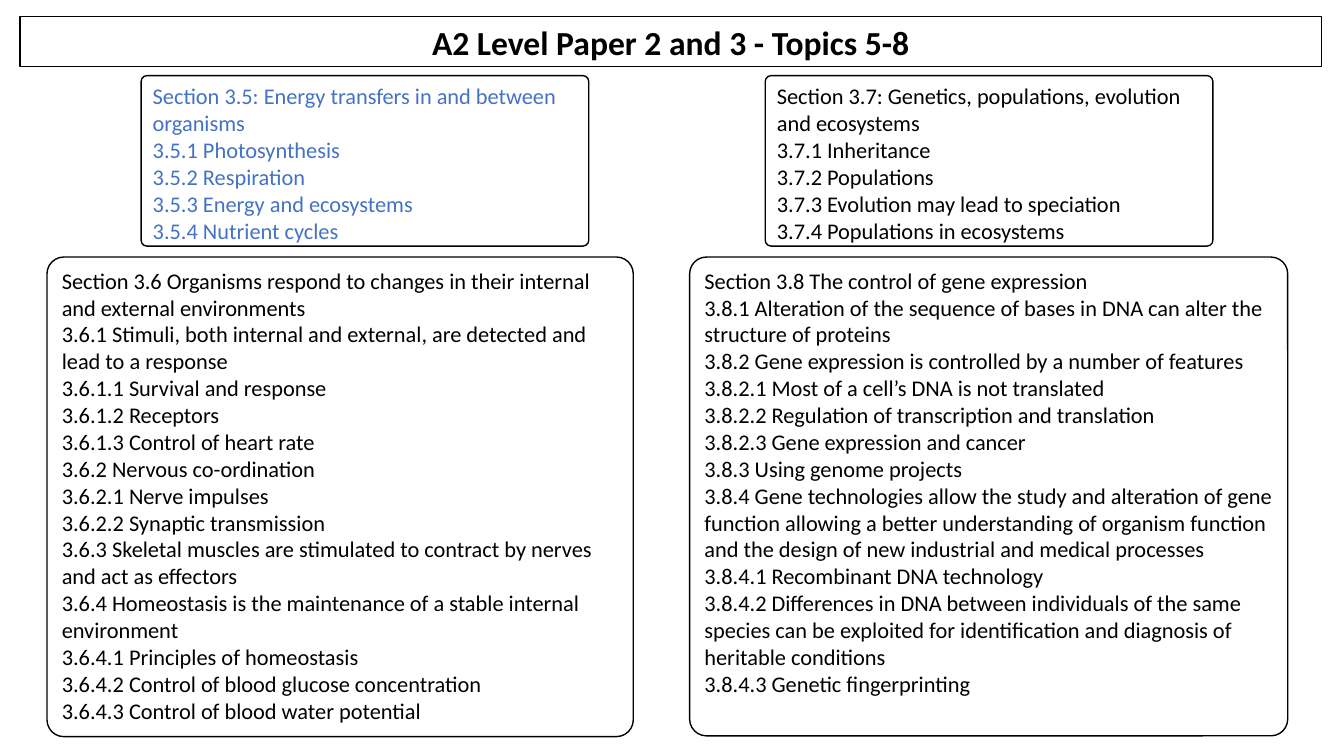
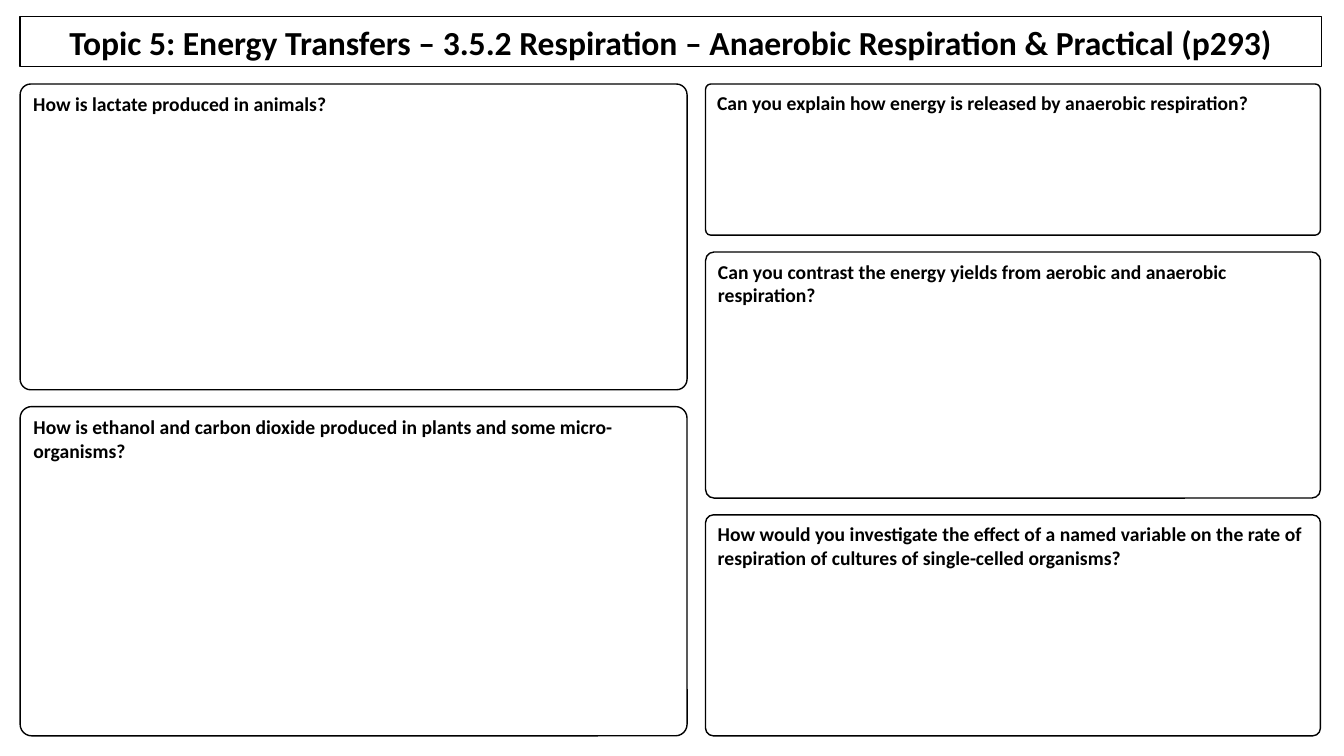
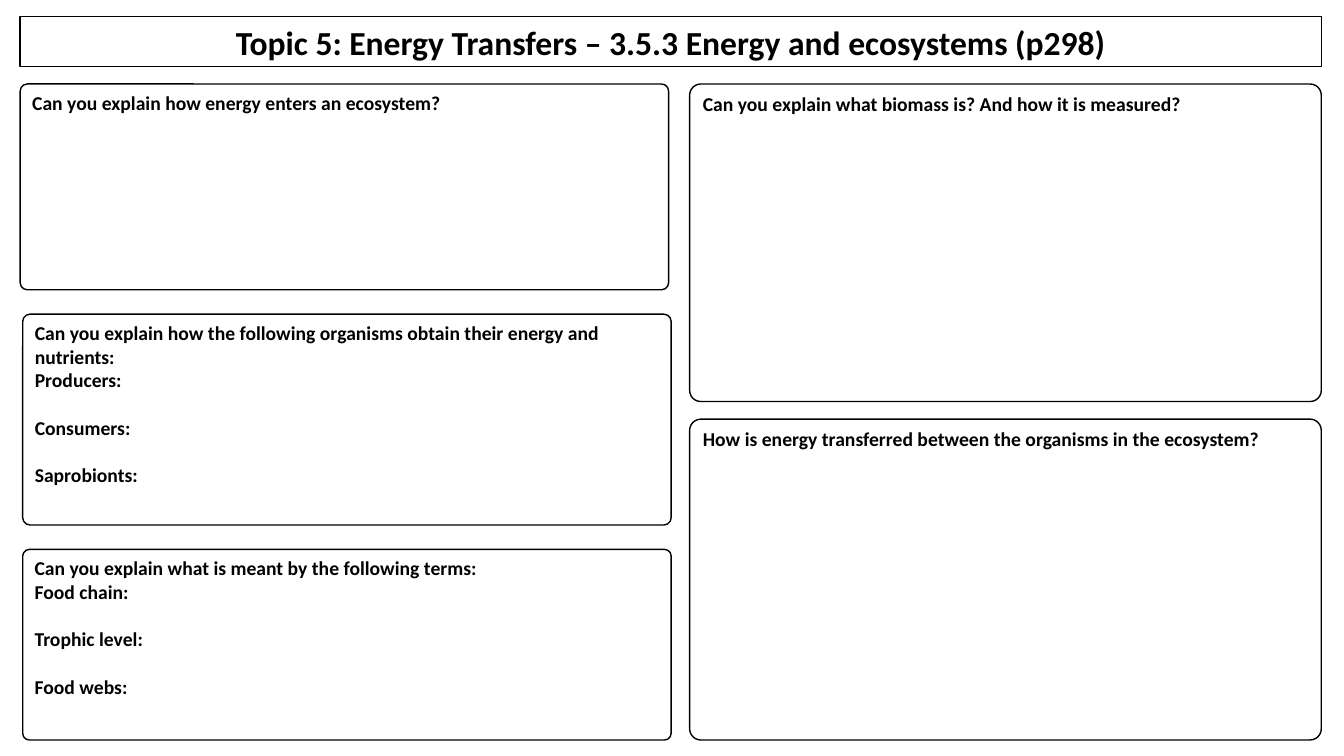
from lxml import etree
from pptx import Presentation
from pptx import util as u
from pptx.dml.color import RGBColor
from pptx.enum import shapes, text
from pptx.oxml.ns import qn

BLACK = RGBColor(0x00, 0x00, 0x00)
BLUE = RGBColor(0x44, 0x72, 0xC4)
FONT = "Calibri"
CORNER = 0.035
CELL = u.Inches(1 / 12)  # the slide is a grid of 160 columns by 90 rows
GAP_AFTER_TERM = 17  # one line left free for an answer

# Each stack: left, top, width, gap, boxes from top to bottom as (height, paragraphs)
SYLLABUS = [
    (16.8, 9, 53.3, 0, [(20.3, [
        "Section 3.5: Energy transfers in and between organisms",
        "3.5.1 Photosynthesis",
        "3.5.2 Respiration",
        "3.5.3 Energy and ecosystems",
        "3.5.4 Nutrient cycles"])]),
    (91.1, 9, 53.3, 0, [(20.3, [
        "Section 3.7: Genetics, populations, evolution and ecosystems",
        "3.7.1 Inheritance",
        "3.7.2 Populations",
        "3.7.3 Evolution may lead to speciation",
        "3.7.4 Populations in ecosystems"])]),
    (5.6, 30.6, 69.8, 0, [(57.1, [
        "Section 3.6 Organisms respond to changes in their internal and external environments",
        "3.6.1 Stimuli, both internal and external, are detected and lead to a response",
        "3.6.1.1 Survival and response",
        "3.6.1.2 Receptors",
        "3.6.1.3 Control of heart rate",
        "3.6.2 Nervous co-ordination",
        "3.6.2.1 Nerve impulses",
        "3.6.2.2 Synaptic transmission",
        "3.6.3 Skeletal muscles are stimulated to contract by nerves and act as effectors",
        "3.6.4 Homeostasis is the maintenance of a stable internal environment",
        "3.6.4.1 Principles of homeostasis",
        "3.6.4.2 Control of blood glucose concentration",
        "3.6.4.3 Control of blood water potential"])]),
    (82.1, 30.6, 71.2, 0, [(57, [
        "Section 3.8 The control of gene expression",
        "3.8.1 Alteration of the sequence of bases in DNA can alter the structure of proteins",
        "3.8.2 Gene expression is controlled by a number of features",
        "3.8.2.1 Most of a cell’s DNA is not translated",
        "3.8.2.2 Regulation of transcription and translation",
        "3.8.2.3 Gene expression and cancer",
        "3.8.3 Using genome projects",
        "3.8.4 Gene technologies allow the study and alteration of gene function allowing "
        "a better understanding of organism function and the design of new industrial "
        "and medical processes",
        "3.8.4.1 Recombinant DNA technology",
        "3.8.4.2 Differences in DNA between individuals of the same species can be "
        "exploited for identification and diagnosis of heritable conditions",
        "3.8.4.3 Genetic fingerprinting"])]),
]
ANAEROBIC = [
    (2.4, 10, 79.4, 2, [
        (36.4, ["How is lactate produced in animals?"]),
        (39.2, ["How is ethanol and carbon dioxide produced in plants and some micro-organisms?"])]),
    (84, 10, 73.2, 2, [
        (18, ["Can you explain how energy is released by anaerobic respiration?"]),
        (29.3, ["Can you contrast the energy yields from aerobic and anaerobic respiration?"]),
        (26.3, ["How would you investigate the effect of a named variable on the rate of "
                "respiration of cultures of single-celled organisms?"])]),
]
ECOSYSTEMS = [
    (2.4, 10, 77.2, 0, [
        (24.5, ["Can you explain how energy enters an ecosystem?"])]),
    (2.7, 37.4, 77.2, 2.9, [
        (25.1, ["Can you explain how the following organisms obtain their energy and nutrients:",
                "Producers:", "Consumers:", "Saprobionts:"]),
        (22.7, ["Can you explain what is meant by the following terms:",
                "Food chain:", "Trophic level:", "Food webs:"])]),
    (82.1, 10, 75.2, 2.1, [
        (37.8, ["Can you explain what biomass is? And how it is measured?"]),
        (38.2, ["How is energy transferred between the organisms in the ecosystem?"])]),
]
SLIDES = [
    ("A2 Level Paper 2 and 3 - Topics 5-8", SYLLABUS, {"size": 16}),
    ("Topic 5: Energy Transfers – 3.5.2 Respiration – Anaerobic Respiration & Practical (p293)",
     ANAEROBIC, {"size": 14, "bold": True}),
    ("Topic 5: Energy Transfers – 3.5.3 Energy and ecosystems (p298)",
     ECOSYSTEMS, {"size": 14, "bold": True, "gap": GAP_AFTER_TERM}),
]


def write(box, paragraphs, size, bold=False, color=BLACK, gap=0,
          align=text.PP_ALIGN.LEFT, anchor=text.MSO_ANCHOR.TOP):
    """Outline the box and fill it with text; gap is the space from the third paragraph on."""
    box.fill.background()
    box.line.color.rgb = BLACK
    box.line.width = u.Pt(1)
    frame = box.text_frame
    frame.word_wrap = True
    frame.auto_size = text.MSO_AUTO_SIZE.NONE
    frame.vertical_anchor = anchor
    frame.text = "\n".join(paragraphs)
    for index, paragraph in enumerate(frame.paragraphs):
        paragraph.alignment = align
        paragraph.line_spacing = 1.0
        paragraph.space_before = u.Pt(gap if index > 1 else 0)
        font = paragraph.font
        font.name, font.size, font.bold = FONT, u.Pt(size), bold
        font.color.rgb = color


def on_grid(*cells):
    return [round(CELL * cell) for cell in cells]


deck = Presentation()
deck.slide_width, deck.slide_height = on_grid(160, 90)
title_only = deck.slide_layouts[5]

for heading, stacks, style in SLIDES:
    slide = deck.slides.add_slide(title_only)

    title = slide.shapes.title
    title.left, title.top, title.width, title.height = on_grid(2.4, 2, 154.9, 5.9)
    outline = etree.SubElement(title.element.spPr, qn("a:prstGeom"), prst="roundRect")
    corners = etree.SubElement(outline, qn("a:avLst"))
    etree.SubElement(corners, qn("a:gd"), name="adj", fmla=f"val {round(CORNER * 100000)}")
    write(title, [heading], size=24, bold=True,
          align=text.PP_ALIGN.CENTER, anchor=text.MSO_ANCHOR.MIDDLE)

    for left, top, width, gap, boxes in stacks:
        for height, paragraphs in boxes:
            box = slide.shapes.add_shape(shapes.MSO_SHAPE.ROUNDED_RECTANGLE,
                                         *on_grid(left, top, width, height))
            box.adjustments[0] = CORNER
            box.shadow.inherit = False
            current_topic = paragraphs[0].startswith("Section 3.5")
            write(box, paragraphs, color=BLUE if current_topic else BLACK, **style)
            top += height + gap

deck.save("out.pptx")
